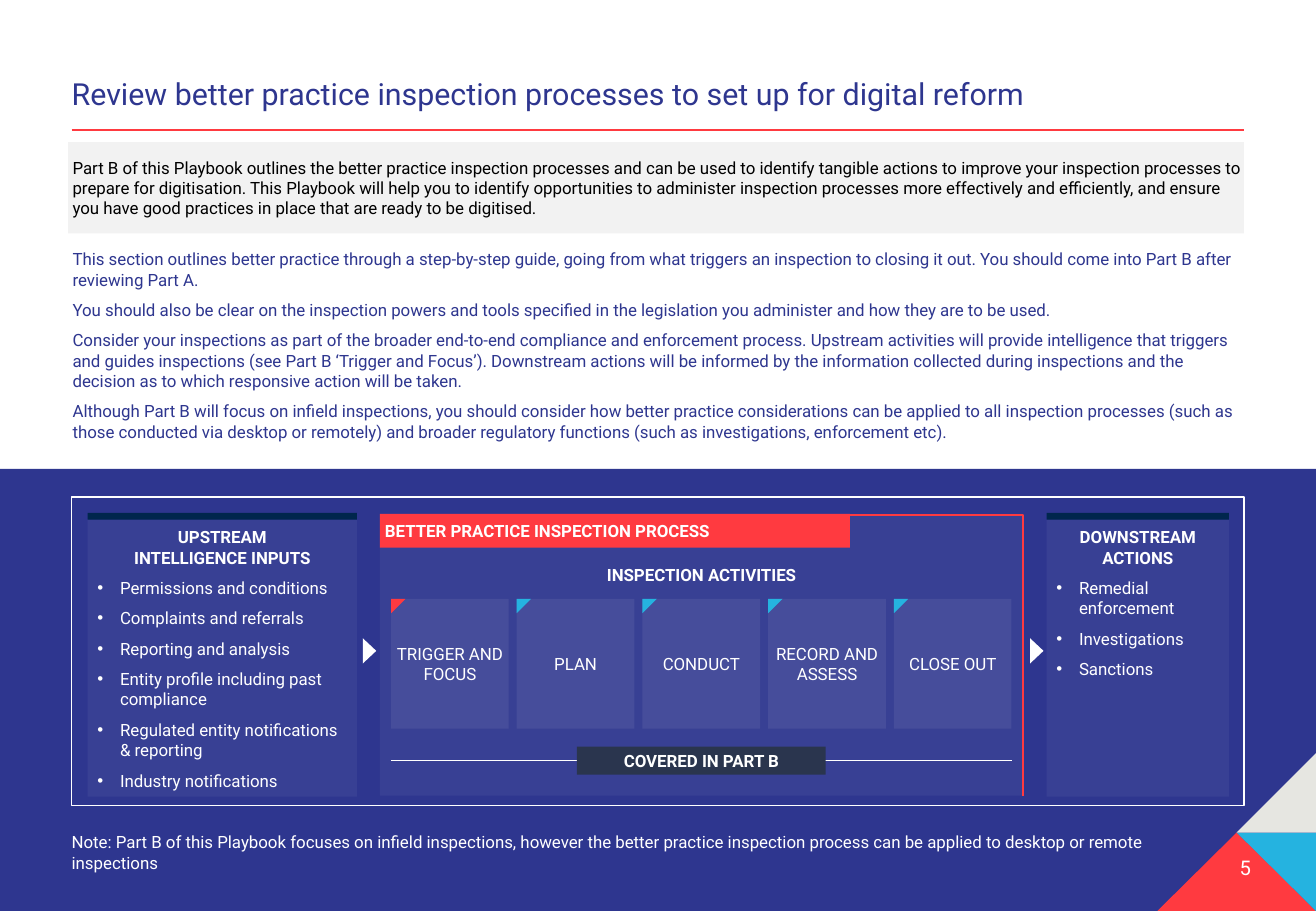
import lxml.etree
import pptx
import pptx.dml.color
import pptx.enum.shapes
import pptx.enum.text
import pptx.oxml.ns
import pptx.util

Pt = pptx.util.Pt
qn = pptx.oxml.ns.qn
hex_color = pptx.dml.color.RGBColor.from_string
SHAPE = pptx.enum.shapes.MSO_SHAPE
ALIGN = pptx.enum.text.PP_ALIGN
ANCHOR = pptx.enum.text.MSO_ANCHOR

FONT = "Roboto"
NAVY, RED, CYAN, WHITE = "2E368F", "FF3A40", "25B3E0", "FFFFFF"
MIDDLE_INSETS = (3, 3, 3, 3)
TEXT_INSETS = (0, 3.6, 0, 3.6)


def paint(shape, fill=None, opacity=None, line=None, width=1):
    """Set fill (opacity in percent) and outline, drop the shadow, return the shape."""
    shape.shadow.inherit = False
    if fill:
        shape.fill.solid()
        shape.fill.fore_color.rgb = hex_color(fill)
    else:
        shape.fill.background()
    if opacity:
        color = shape.fill._xPr.find(qn("a:solidFill"))[0]
        lxml.etree.SubElement(color, qn("a:alpha")).set("val", str(opacity * 1000))
    if line:
        shape.line.color.rgb = hex_color(line)
        shape.line.width = Pt(width)
    else:
        shape.line.fill.background()
    return shape


def write(shape, texts, color=WHITE, size=10, bold=False, align=ALIGN.LEFT,
          anchor=ANCHOR.MIDDLE, insets=MIDDLE_INSETS, before=0, bullets=()):
    """Fill a shape with plain paragraphs, then with bulleted ones."""
    frame = shape.text_frame
    frame.word_wrap = True
    frame.vertical_anchor = anchor
    frame.margin_left, frame.margin_top, frame.margin_right, frame.margin_bottom = map(Pt, insets)
    for index, text in enumerate([*texts, *bullets]):
        paragraph = frame.add_paragraph() if index else frame.paragraphs[0]
        bulleted = index >= len(texts)
        paragraph.alignment = ALIGN.LEFT if bulleted else align
        paragraph.space_before = Pt(before if index else 0)
        paragraph.space_after = Pt(6 if bullets else 0)
        if bulleted:
            properties = paragraph._p.get_or_add_pPr()
            properties.set("marL", str(Pt(13.5)))
            properties.set("indent", str(Pt(-13.5)))
            bullet_color = lxml.etree.SubElement(properties, qn("a:buClr"))
            lxml.etree.SubElement(bullet_color, qn("a:srgbClr")).set("val", color)
            lxml.etree.SubElement(properties, qn("a:buFont")).set("typeface", "Arial")
            lxml.etree.SubElement(properties, qn("a:buChar")).set("char", "•")
        for number, part in enumerate(text.split("\n")):
            if number:
                paragraph.add_line_break()
            run = paragraph.add_run()
            run.text = part
            run.font.name = FONT
            run.font.size = Pt(size)
            run.font.bold = bold and not bulleted
            run.font.color.rgb = hex_color(color)


presentation = pptx.Presentation()
presentation.slide_width, presentation.slide_height = Pt(780), Pt(540)
slide = presentation.slides.add_slide(presentation.slide_layouts[6])
shapes = slide.shapes

# Background band and corner triangles
paint(shapes.add_shape(SHAPE.RECTANGLE, Pt(0), Pt(278), Pt(780), Pt(262)), NAVY)
corner_triangles = [
    (RED, [(733, 493.5), (686, 540), (780, 540)]),
    (CYAN, [(780, 493.5), (733, 493.5), (780, 540)]),
    ("E6E6E1", [(780, 446.5), (733, 493.5), (780, 493.5)]),
]
for color, points in corner_triangles:
    start, *others = [(Pt(x), Pt(y)) for x, y in points]
    builder = shapes.build_freeform(*start, scale=1)
    builder.add_line_segments(others, close=True)
    paint(builder.convert_to_shape(), color)
page_number = shapes.add_textbox(Pt(679), Pt(503.3), Pt(62.5), Pt(21.6))
write(page_number, ["5"], size=12, align=ALIGN.RIGHT, anchor=ANCHOR.TOP, insets=TEXT_INSETS)

# Title and introduction
title = shapes.add_textbox(Pt(42.5), Pt(43.2), Pt(694.8), Pt(26.6))
write(title, ["Review better practice inspection processes to set up for digital reform"],
      NAVY, 18, anchor=ANCHOR.BOTTOM, insets=TEXT_INSETS)
title.text_frame.paragraphs[0].line_spacing = 0.9

summary = paint(shapes.add_shape(SHAPE.RECTANGLE, Pt(40.3), Pt(84.3), Pt(697), Pt(54)), "F2F2F2")
write(summary, [
    "Part B of this Playbook outlines the better practice inspection processes and can be used to "
    "identify tangible actions to improve your inspection processes to prepare for digitisation. "
    "This Playbook will help you to identify opportunities to administer inspection processes more "
    "effectively and efficiently, and ensure you have good practices in place that are ready to be "
    "digitised."], "000000", insets=(2.7, 3.6, 0, 3.6))

body = shapes.add_textbox(Pt(43), Pt(144), Pt(694.8), Pt(120))
write(body, [
    "This section outlines better practice through a step-by-step guide, going from what triggers "
    "an inspection to closing it out. You should come into Part B after reviewing Part A.",
    "You should also be clear on the inspection powers and tools specified in the legislation you "
    "administer and how they are to be used.",
    "Consider your inspections as part of the broader end-to-end compliance and enforcement "
    "process. Upstream activities will provide intelligence that triggers and guides inspections "
    "(see Part B ‘Trigger and Focus’). Downstream actions will be informed by the information "
    "collected during inspections and the decision as to which responsive action will be taken.",
    "Although Part B will focus on infield inspections, you should consider how better practice "
    "considerations can be applied to all inspection processes (such as those conducted via "
    "desktop or remotely) and broader regulatory functions (such as investigations, enforcement "
    "etc)."], NAVY, anchor=ANCHOR.TOP, insets=TEXT_INSETS, before=6)

note = shapes.add_textbox(Pt(42.5), Pt(489.6), Pt(657.4), Pt(31.7))
write(note, [
    "Note: Part B of this Playbook focuses on infield inspections, however the better practice "
    "inspection process can be applied to desktop or remote inspections"],
    anchor=ANCHOR.TOP, insets=(0, 3.6, 7.2, 3.6))

# Process frame with the upstream and downstream panels
paint(shapes.add_shape(SHAPE.RECTANGLE, Pt(42.5), Pt(294.7), Pt(694.8), Pt(182.6)),
      line=WHITE, width=0.75)
side_panels = [
    (52, 159.5, "UPSTREAM\nINTELLIGENCE INPUTS",
     ["Permissions and conditions", "Complaints and referrals", "Reporting and analysis",
      "Entity profile including past compliance", "Regulated entity notifications & reporting",
      "Industry notifications"]),
    (620.4, 108, "DOWNSTREAM ACTIONS",
     ["Remedial enforcement", "Investigations", "Sanctions"]),
]
for left, width, heading, items in side_panels:
    panel = paint(shapes.add_shape(SHAPE.RECTANGLE, Pt(left), Pt(308), Pt(width), Pt(164.2)),
                  WHITE, opacity=5)
    write(panel, [heading], bold=True, align=ALIGN.CENTER, anchor=ANCHOR.TOP,
          insets=(5.7, 4.3, 5.7, 3.6), bullets=items)
    paint(shapes.add_shape(SHAPE.RECTANGLE, Pt(left), Pt(304), Pt(width), Pt(4)), "00264D")

for left in (211.5, 607):
    arrow = paint(shapes.add_shape(SHAPE.ISOSCELES_TRIANGLE, Pt(left), Pt(381.8), Pt(15), Pt(8)),
                  WHITE)
    arrow.rotation = 90

# Inspection process panel
paint(shapes.add_shape(SHAPE.RECTANGLE, Pt(225.2), Pt(304.6), Pt(381.4), Pt(167)),
      WHITE, opacity=5)
banner = paint(shapes.add_shape(SHAPE.RECTANGLE, Pt(225.2), Pt(304.6), Pt(278.6), Pt(20)), RED)
write(banner, ["BETTER PRACTICE INSPECTION PROCESS"], bold=True)
builder = shapes.build_freeform(Pt(465), Pt(305.3), scale=1)
builder.add_line_segments([(Pt(606.3), Pt(305.3)), (Pt(606.3), Pt(471.6))], close=False)
paint(builder.convert_to_shape(), line=RED)
activities = shapes.add_textbox(Pt(231.8), Pt(330.5), Pt(368), Pt(20))
write(activities, ["INSPECTION ACTIVITIES"], bold=True, align=ALIGN.CENTER)

steps = ["TRIGGER AND FOCUS", "PLAN", "CONDUCT", "RECORD AND ASSESS", "CLOSE OUT"]
for index, name in enumerate(steps):
    left = Pt(231.8 + 74.5 * index)
    step = paint(shapes.add_shape(SHAPE.RECTANGLE, left, Pt(355), Pt(69.8), Pt(77)),
                 WHITE, opacity=7)
    write(step, [name], align=ALIGN.CENTER)
    marker = paint(shapes.add_shape(SHAPE.RIGHT_TRIANGLE, left, Pt(355), Pt(8.5), Pt(8.5)),
                   CYAN if index else RED)
    marker.rotation = 90

# Title rule and coverage line
rules = [(42.5, 737.3, 77, RED, 1.25), (231.8, 599.6, 450.9, WHITE, 1)]
for left, right, top, color, width in rules:
    rule = shapes.add_connector(pptx.enum.shapes.MSO_CONNECTOR.STRAIGHT,
                                Pt(left), Pt(top), Pt(right), Pt(top))
    rule.line.color.rgb = hex_color(color)
    rule.line.width = Pt(width)
    lxml.etree.SubElement(rule._element.spPr, qn("a:effectLst"))
coverage = paint(shapes.add_shape(SHAPE.RECTANGLE, Pt(342), Pt(442.6), Pt(147.4), Pt(16.6)),
                 "2A354E")
write(coverage, ["COVERED IN PART B"], bold=True, align=ALIGN.CENTER)

presentation.save("out.pptx")
